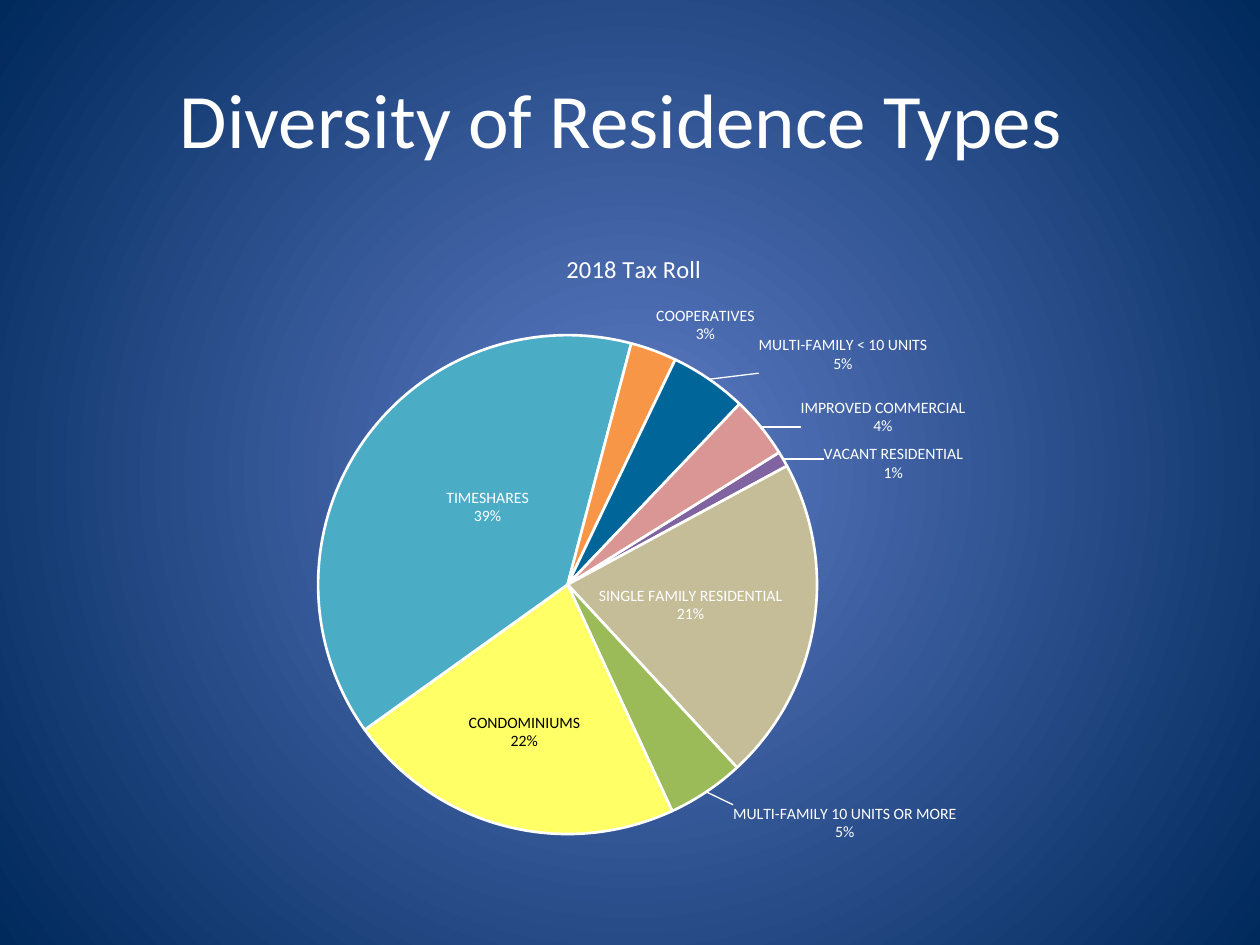
from lxml import etree
from pptx import Presentation, util as u
from pptx.chart.data import CategoryChartData
from pptx.dml.color import RGBColor
from pptx.enum import chart as ch, text as t
from pptx.oxml import parse_xml
from pptx.oxml.ns import nsdecls, qn

WHITE = RGBColor(0xFF, 0xFF, 0xFF)
BLACK = RGBColor(0, 0, 0)
GLOW = RGBColor(0x5E, 0x7C, 0xC5)
NAVY = RGBColor(0x00, 0x29, 0x5C)
PURPLE = RGBColor(0x80, 0x64, 0xA2)
TAN = RGBColor(0xC4, 0xBD, 0x97)
GREEN = RGBColor(0x9B, 0xBB, 0x59)
YELLOW = RGBColor(0xFF, 0xFF, 0x66)
TEAL = RGBColor(0x4B, 0xAC, 0xC6)
ORANGE = RGBColor(0xF7, 0x96, 0x46)
BLUE = RGBColor(0x00, 0x66, 0x99)
PINK = RGBColor(0xD9, 0x96, 0x94)

WIDE, HIGH = u.Inches(10), u.Inches(7.5)
START = 58
IN = ch.XL_LABEL_POSITION.CENTER
OUT = ch.XL_LABEL_POSITION.OUTSIDE_END
SLICES = [
    ("VACANT RESIDENTIAL", 1, PURPLE, OUT, WHITE, (0.03, 0.04)),
    ("SINGLE FAMILY RESIDENTIAL", 21, TAN, IN, WHITE, None),
    ("MULTI-FAMILY 10 UNITS OR MORE", 5, GREEN, OUT, WHITE, (0.02, 0.01)),
    ("CONDOMINIUMS", 22, YELLOW, IN, BLACK, (-0.01, 0.04)),
    ("TIMESHARES", 39, TEAL, IN, WHITE, (0.02, -0.01)),
    ("COOPERATIVES", 3, ORANGE, OUT, WHITE, None),
    ("MULTI-FAMILY < 10 UNITS", 5, BLUE, OUT, WHITE, (0.04, 0)),
    ("IMPROVED COMMERCIAL", 4, PINK, OUT, WHITE, (0.03, 0.02)),
]


def style(item, **form):
    """Set attributes of an item from a dict of format values."""
    for name, val in form.items():
        setattr(item, name, val)


def font(item, size, color=WHITE):
    """Give a font its face, size and colour."""
    style(item, name="Calibri", size=u.Pt(size), bold=False)
    item.color.rgb = color


def share(box):
    """Turn shares of the slide into lengths."""
    x, y, w, h = box
    return int(x * WIDE), int(y * HIGH), int(w * WIDE), int(h * HIGH)


def layout(node, spot, index, edge=True):
    """Place a chart part by shares of the chart."""
    for old in node.findall(qn("c:layout")):
        node.remove(old)
    modes = "".join(f'<c:{k}Mode val="edge"/>' for k in "xy") if edge else ""
    vals = "".join(f'<c:{k} val="{v}"/>' for k, v in zip("xywh", spot))
    node.insert(index, parse_xml(
        f'<c:layout {nsdecls("c")}><c:manualLayout>{modes}{vals}'
        '</c:manualLayout></c:layout>'))


def backdrop(slide):
    """Fill the slide with a round glow."""
    fill = slide.background.fill
    fill.gradient()
    for stop, color in zip(fill.gradient_stops, (GLOW, NAVY)):
        stop.color.rgb = color
    grad = slide.element.find(".//" + qn("a:gradFill"))
    lin = grad.find(qn("a:lin"))
    if lin is not None:
        grad.remove(lin)
    grad.append(parse_xml(
        f'<a:path {nsdecls("a")} path="circle"><a:fillToRect l="50000" '
        't="50000" r="50000" b="50000"/></a:path>'))


def title(slide, box):
    """Write the slide title in the middle of the box."""
    frame = slide.shapes.add_textbox(*share(box)).text_frame
    style(frame, word_wrap=True, vertical_anchor=t.MSO_ANCHOR.MIDDLE)
    para = frame.paragraphs[0]
    style(para, text="Diversity of Residence Types ", alignment=t.PP_ALIGN.CENTER)
    font(para.runs[0].font, 44)


def tag(point, place, color, shift):
    """Label one slice with its category and percentage."""
    label = point.data_label
    font(label.font, 9, color)
    label.position = place
    node = point.data_label.font and label._dLbl
    shows = {"showVal": 0, "showCatName": 1, "showPercent": 1}
    for name, val in shows.items():
        node.find(qn("c:" + name)).set("val", str(val))
    etree.SubElement(node, qn("c:separator")).text = "\n"
    if shift:
        layout(node, shift, 1, edge=False)


def pie(slide, box):
    """Draw the tax roll pie in the box."""
    data = CategoryChartData()
    data.categories = [row[0] for row in SLICES]
    data.add_series("Series 1", [row[1] for row in SLICES])
    chart = slide.shapes.add_chart(
        ch.XL_CHART_TYPE.PIE, *share(box), data).chart
    style(chart, has_legend=False, has_title=True)
    font(chart.font, 10)
    head = chart.chart_title.text_frame
    head.text = "2018 Tax Roll"
    font(head.paragraphs[0].runs[0].font, 14)
    plot = chart.plots[0]
    plot.vary_by_categories = True
    series = plot.series[0]
    for i, (_, _, color, place, ink, shift) in enumerate(SLICES):
        point = series.points[i]
        point.format.fill.solid()
        point.format.fill.fore_color.rgb = color
        point.format.line.color.rgb = WHITE
        point.format.line.width = u.Pt(1.5)
        tag(point, place, ink, shift)
    space = chart.element
    layout(space.find(".//" + qn("c:title")), (0.44, 0.04), 1)
    layout(space.find(".//" + qn("c:plotArea")), (0.225, 0.17, 0.44, 0.745), 0)
    lead = space.find(".//" + qn("c:showLeaderLines"))
    if lead is not None:
        lead.addnext(parse_xml(
            f'<c:leaderLines {nsdecls("c", "a")}><c:spPr><a:ln w="9525">'
            f'<a:solidFill><a:srgbClr val="{WHITE}"/></a:solidFill></a:ln>'
            '</c:spPr></c:leaderLines>'))
    ring = space.find(".//" + qn("c:pieChart"))
    for old in ring.findall(qn("c:firstSliceAng")):
        ring.remove(old)
    etree.SubElement(ring, qn("c:firstSliceAng")).set("val", str(START))


def main():
    """Build and save the slide."""
    deck = Presentation()
    style(deck, slide_width=WIDE, slide_height=HIGH)
    slide = deck.slides.add_slide(deck.slide_layouts[6])
    backdrop(slide)
    title(slide, (0.05, 0.04, 0.9, 0.17))
    pie(slide, (0.05, 0.233, 0.9, 0.711))
    deck.save("out.pptx")


if __name__ == "__main__":
    main()
